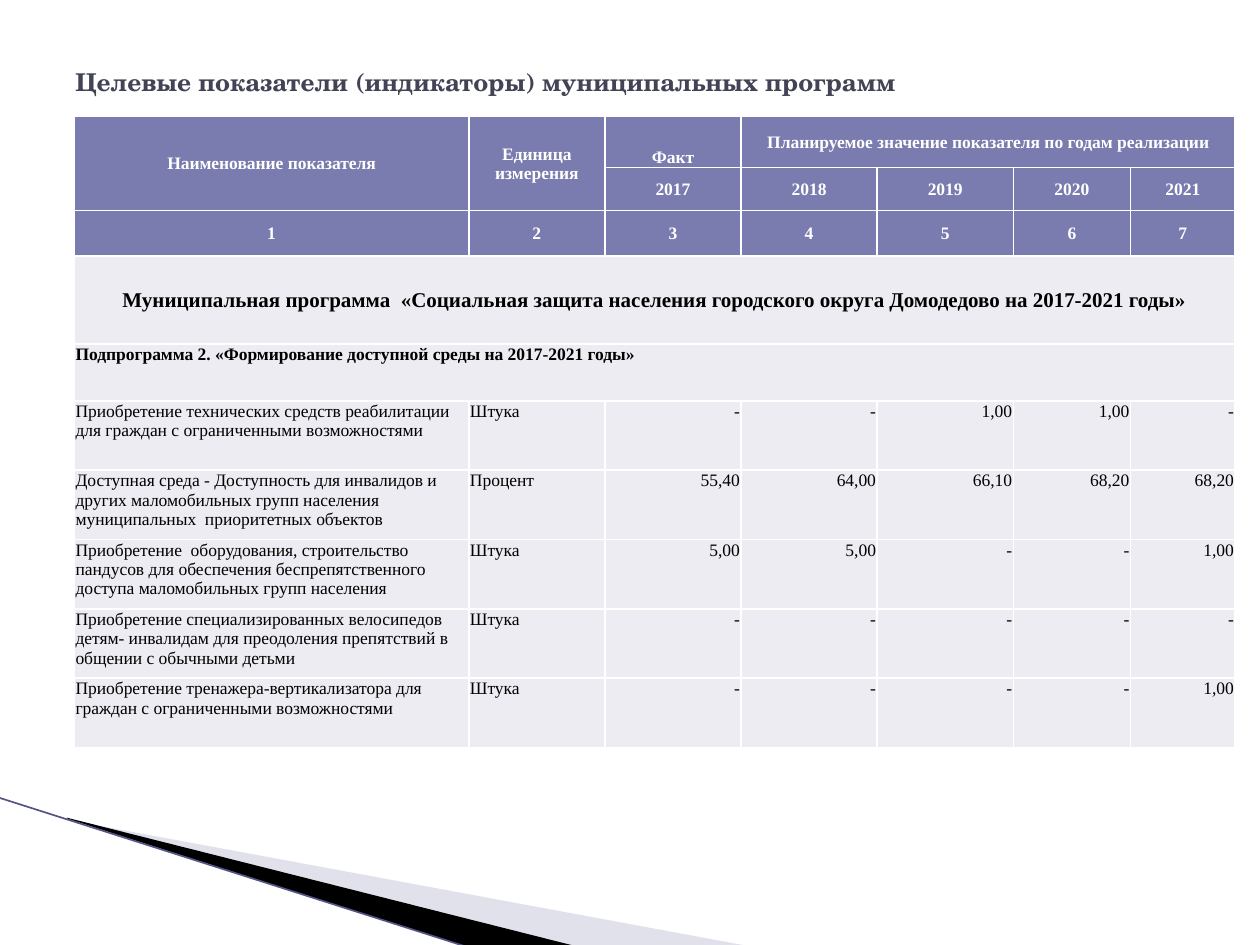
from dataclasses import dataclass
from typing import Optional

from lxml import etree
from pptx import Presentation
from pptx import util as u
from pptx.dml.color import RGBColor
from pptx.enum import shapes, text
from pptx.oxml import ns

Pt = u.Pt
ALIGN = text.PP_ALIGN
ANCHOR = text.MSO_ANCHOR


@dataclass(frozen=True)
class Theme:
    title_font: str = "TeX Gyre Schola"
    table_font: str = "Times New Roman"
    title_size: float = 14
    program_size: float = 12
    table_size: float = 10
    title: str = "424456"
    header: str = "7A7BAE"
    body: str = "ECECF2"
    light: str = "FFFFFF"
    dark: str = "000000"
    pale: str = "B6B6D1"
    edge: str = "53548A"


@dataclass(frozen=True)
class Wedge:
    points: tuple
    color: str
    opacity: Optional[int] = None


@dataclass(frozen=True)
class Item:
    row: int
    col: int
    text: str
    align: ALIGN = ALIGN.LEFT
    anchor: ANCHOR = ANCHOR.TOP
    bold: bool = False
    size: float = 10
    rows: int = 1
    cols: int = 1


T = Theme()
HEADER_ROWS = 3
COLUMNS = (225.4, 77.8, 77.8, 77.8, 77.8, 67, 59.8)
ROWS = (29.5, 20.9, 25.9, 50.4, 32.4) + (39.6,) * 5

WEDGES = (
    Wedge(((39.6, 468.7), (428.4, 540.7), (328.3, 540.7), (39.6, 468)), T.pale, 40),
    Wedge(((38.2, 467.3), (329, 540.7), (267.8, 541.4), (38.9, 468)), T.dark),
)

INDICATORS = (
    ("Приобретение технических средств реабилитации для граждан с ограниченными возможностями",
     "Штука", "-", "-", "1,00", "1,00", "-"),
    ("Доступная среда - Доступность для инвалидов и других маломобильных групп населения "
     "муниципальных  приоритетных объектов",
     "Процент", "55,40", "64,00", "66,10", "68,20", "68,20"),
    ("Приобретение  оборудования, строительство пандусов для обеспечения беспрепятственного "
     "доступа маломобильных групп населения",
     "Штука", "5,00", "5,00", "-", "-", "1,00"),
    ("Приобретение специализированных велосипедов  детям- инвалидам для преодоления "
     "препятствий в общении с обычными детьми",
     "Штука", "-", "-", "-", "-", "-"),
    ("Приобретение тренажера-вертикализатора для граждан с ограниченными возможностями",
     "Штука", "-", "-", "-", "-", "1,00"),
)


def rgb(color: str) -> RGBColor:
    return RGBColor.from_string(color)


def write(tf, content: str, *, font: str, size: float, color: str,
          bold: bool = False, align: ALIGN = ALIGN.LEFT) -> None:
    p = tf.paragraphs[0]
    p.alignment = align
    r = p.add_run()
    r.text = content
    r.font.name = font
    r.font.size = Pt(size)
    r.font.bold = bold
    r.font.color.rgb = rgb(color)


def draw_wedge(s, wedge: Wedge) -> None:
    start, *rest = [(Pt(x), Pt(y)) for x, y in wedge.points]
    builder = s.shapes.build_freeform(*start)
    builder.add_line_segments(rest, close=True)
    sp = builder.convert_to_shape()
    sp.shadow.inherit = False
    sp.fill.solid()
    sp.fill.fore_color.rgb = rgb(wedge.color)
    sp.line.fill.background()
    if wedge.opacity is not None:
        clr = sp.fill._xPr.find(".//" + ns.qn("a:srgbClr"))
        etree.SubElement(clr, ns.qn("a:alpha"), val=str(wedge.opacity * 1000))


def draw_edge(s) -> None:
    line = s.shapes.add_connector(shapes.MSO_CONNECTOR.STRAIGHT,
                                  Pt(-0.7), Pt(455.8), Pt(267.8), Pt(541.4))
    line.line.color.rgb = rgb(T.edge)
    line.line.width = Pt(0.95)
    etree.SubElement(line._element.spPr, ns.qn("a:effectLst"))


def draw_title(s) -> None:
    tf = s.shapes.add_textbox(Pt(36), Pt(21.6), Pt(648), Pt(49.7)).text_frame
    tf.word_wrap = True
    tf.vertical_anchor = ANCHOR.MIDDLE
    write(tf, "Целевые показатели (индикаторы) муниципальных программ",
          font=T.title_font, size=T.title_size, color=T.title, bold=True)


def style_cell(cell, fill: str) -> None:
    cell.margin_left = cell.margin_right = cell.margin_top = Pt(0.7)
    cell.margin_bottom = 0
    tc_pr = cell._tc.get_or_add_tcPr()
    for side in ("lnL", "lnR", "lnT", "lnB"):
        ln = etree.SubElement(tc_pr, ns.qn("a:" + side), w=str(Pt(1)))
        solid = etree.SubElement(ln, ns.qn("a:solidFill"))
        etree.SubElement(solid, ns.qn("a:srgbClr"), val=T.light)
    cell.fill.solid()
    cell.fill.fore_color.rgb = rgb(fill)


def heading(row: int, col: int, content: str, **options) -> Item:
    return Item(row, col, content, **{"align": ALIGN.CENTER, "anchor": ANCHOR.MIDDLE,
                                      "bold": True, **options})


def table_items() -> list[Item]:
    items = [
        heading(0, 0, "Наименование показателя", rows=2),
        heading(0, 1, "Единица измерения", rows=2),
        heading(0, 2, "Факт", anchor=ANCHOR.BOTTOM),
        heading(0, 3, "Планируемое значение показателя по годам реализации", cols=4),
        heading(3, 0, "Муниципальная программа  «Социальная защита населения городского "
                      "округа Домодедово на 2017-2021 годы»", size=T.program_size, cols=7),
        Item(4, 0, "Подпрограмма 2. «Формирование доступной среды на 2017-2021 годы»",
             bold=True, cols=7),
    ]
    items += [heading(1, col, str(2015 + col)) for col in range(2, 7)]
    items += [heading(2, col, str(col + 1)) for col in range(7)]
    items += [Item(row, col, content, align=ALIGN.LEFT if col < 2 else ALIGN.RIGHT)
              for row, values in enumerate(INDICATORS, 5)
              for col, content in enumerate(values)]
    return items


def draw_table(s) -> None:
    table = s.shapes.add_table(len(ROWS), len(COLUMNS), Pt(42.5), Pt(66.2),
                               Pt(sum(COLUMNS)), Pt(sum(ROWS))).table
    table.first_row = table.horz_banding = False
    for column, width in zip(table.columns, COLUMNS):
        column.width = Pt(width)
    for i, (row, height) in enumerate(zip(table.rows, ROWS)):
        row.height = Pt(height)
        for cell in row.cells:
            style_cell(cell, T.header if i < HEADER_ROWS else T.body)
    for item in table_items():
        cell = table.cell(item.row, item.col)
        if item.rows > 1 or item.cols > 1:
            cell.merge(table.cell(item.row + item.rows - 1, item.col + item.cols - 1))
        cell.vertical_anchor = item.anchor
        write(cell.text_frame, item.text, font=T.table_font, size=item.size,
              color=T.light if item.row < HEADER_ROWS else T.dark,
              bold=item.bold, align=item.align)


def main() -> None:
    prs = Presentation()
    prs.slide_width, prs.slide_height = Pt(720), Pt(540)
    s = prs.slides.add_slide(prs.slide_layouts[6])
    for wedge in WEDGES:
        draw_wedge(s, wedge)
    draw_edge(s)
    draw_title(s)
    draw_table(s)
    prs.save("out.pptx")


if __name__ == "__main__":
    main()
